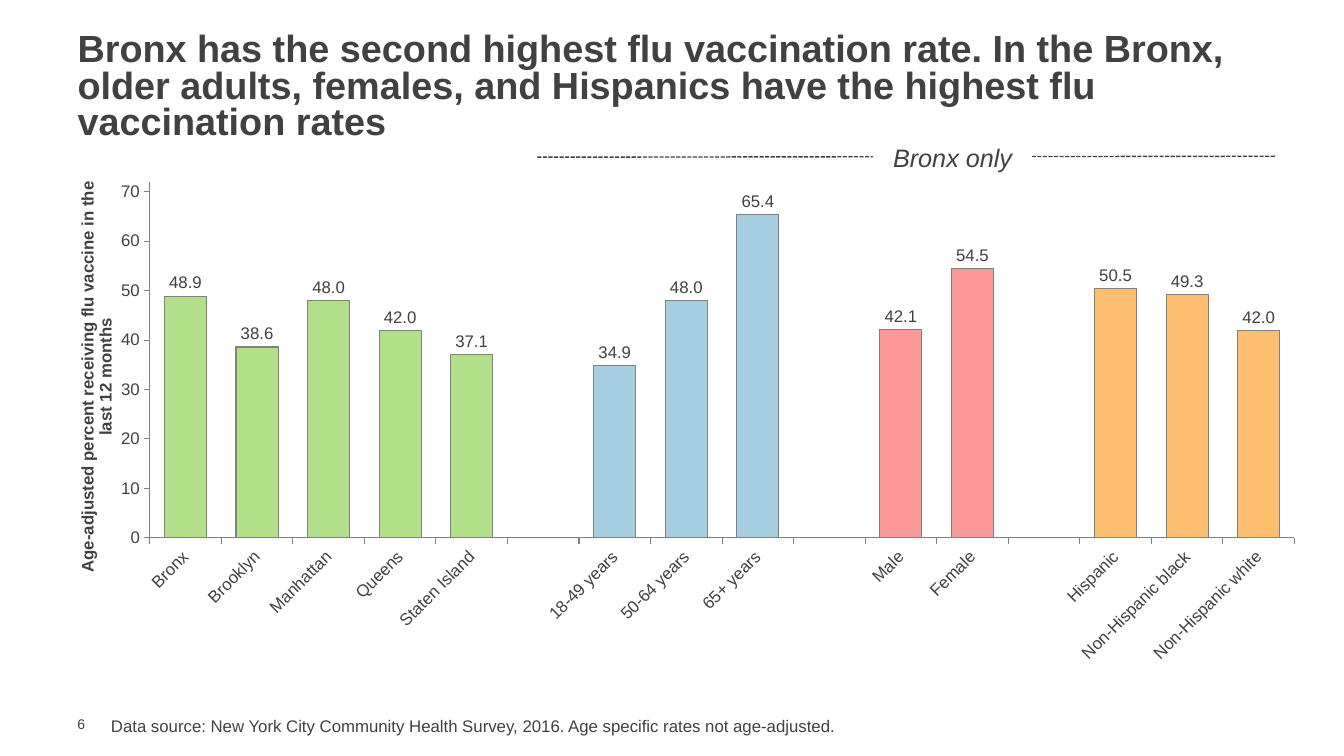
from lxml.etree import SubElement
from pptx import Presentation
from pptx.chart.data import CategoryChartData
from pptx.dml.color import RGBColor
from pptx.enum.chart import XL_CHART_TYPE, XL_LABEL_POSITION, XL_TICK_MARK
from pptx.enum.dml import MSO_LINE
from pptx.enum.shapes import MSO_CONNECTOR, MSO_SHAPE
from pptx.enum.text import MSO_ANCHOR, PP_ALIGN
from pptx.oxml import parse_xml
from pptx.oxml.ns import nsdecls, qn
from pptx.util import Pt

INK = RGBColor(0x41, 0x40, 0x42)
WHITE = RGBColor(0xFF, 0xFF, 0xFF)
GREY = RGBColor(0x80, 0x80, 0x80)
GREEN = RGBColor(0xB2, 0xDF, 0x8A)
BLUE = RGBColor(0xA6, 0xCE, 0xE3)
PINK = RGBColor(0xFB, 0x9A, 0x99)
ORANGE = RGBColor(0xFD, 0xBF, 0x6F)

HEADLINE = ("Bronx has the second highest flu vaccination rate. In the Bronx, older adults, "
            "females, and Hispanics have the highest flu vaccination rates")
RATE_AXIS = "Age-adjusted percent receiving flu vaccine in the last 12 months"
SOURCE = ("Data source: New York City Community Health Survey, 2016. "
          "Age specific rates not age-adjusted.")
GROUPS = [
    (GREEN, {"Bronx": 48.9, "Brooklyn": 38.6, "Manhattan": 48.0, "Queens": 42.0,
             "Staten Island": 37.1}),
    (BLUE, {"18-49 years": 34.9, "50-64 years": 48.0, "65+ years": 65.4}),
    (PINK, {"Male": 42.1, "Female": 54.5}),
    (ORANGE, {"Hispanic": 50.5, "Non-Hispanic black": 49.3, "Non-Hispanic white": 42.0}),
]


def style_font(font, size, bold=False, italic=False):
    """Give a font the deck's typeface and ink colour."""
    font.name = "Arial"
    font.size = Pt(size)
    font.bold = bold
    font.italic = italic
    font.color.rgb = INK


def write_text(shape, text, size, bold=False, italic=False):
    """Put one formatted paragraph in a shape and return the paragraph."""
    shape.text_frame.word_wrap = True
    shape.text_frame.text = text
    paragraph = shape.text_frame.paragraphs[0]
    style_font(paragraph.runs[0].font, size, bold, italic)
    return paragraph


def add_headline(slide, left, top, width, height):
    """Place the slide title in its box."""
    headline = slide.shapes.title
    headline.left, headline.top = Pt(left), Pt(top)
    headline.width, headline.height = Pt(width), Pt(height)
    headline.text_frame.vertical_anchor = MSO_ANCHOR.MIDDLE
    paragraph = write_text(headline, HEADLINE, 27, bold=True)
    paragraph.alignment = PP_ALIGN.LEFT
    paragraph.line_spacing = 0.8


def layout_xml(target, **fractions):
    """Build a manual chart layout from fractions of the chart."""
    inner = '<c:layoutTarget val="inner"/>' if target == "inner" else ""
    modes = '<c:xMode val="edge"/><c:yMode val="edge"/>'
    sizes = "".join(f'<c:{key} val="{value}"/>' for key, value in fractions.items())
    return parse_xml(f'<c:layout {nsdecls("c")}><c:manualLayout>{inner}{modes}{sizes}'
                     '</c:manualLayout></c:layout>')


def set_layout(parent, layout, position):
    """Replace the layout of a chart part, at the given child position."""
    for old in parent.findall(qn("c:layout")):
        parent.remove(old)
    parent.insert(position, layout)


def style_axes(chart):
    """Format the category and the rate axis."""
    for axis in (chart.category_axis, chart.value_axis):
        axis.has_major_gridlines = False
        axis.major_tick_mark = XL_TICK_MARK.OUTSIDE
        axis.minor_tick_mark = XL_TICK_MARK.NONE
        axis.format.line.color.rgb = GREY
        axis.format.line.width = Pt(0.75)
        style_font(axis.tick_labels.font, 12)
    category_text = chart.category_axis._element.find(qn("c:txPr")).find(qn("a:bodyPr"))
    category_text.set("rot", "-2700000")
    category_text.set("vert", "horz")

    rates = chart.value_axis
    rates.minimum_scale, rates.maximum_scale, rates.major_unit = 0, 72, 10
    rates.tick_labels.number_format = "0"
    rates.tick_labels.number_format_is_linked = False
    rate_title = rates.axis_title
    rate_title.text_frame.text = RATE_AXIS
    style_font(rate_title.text_frame.paragraphs[0].runs[0].font, 12, bold=True)
    title_body = rate_title._element.find(".//" + qn("a:bodyPr"))
    title_body.set("rot", "-5400000")
    title_body.set("vert", "horz")
    set_layout(rate_title._element, layout_xml("outer", x=0.006, y=0.02), 1)


def add_rate_chart(slide, left, top, width, height):
    """Place the column chart of vaccination rates, one colour per group."""
    data = CategoryChartData(number_format="#,##0.0")
    bar_colors, labels, values = [], [], []
    for color, rates in GROUPS:
        if labels:
            labels.append("")
            values.append(None)
            bar_colors.append(color)
        labels.extend(rates)
        values.extend(rates.values())
        bar_colors.extend([color] * len(rates))
    data.categories = labels
    data.add_series("Series 1", values)
    chart = slide.shapes.add_chart(XL_CHART_TYPE.COLUMN_CLUSTERED, Pt(left), Pt(top),
                                   Pt(width), Pt(height), data).chart
    chart.has_legend = False
    chart.has_title = False
    style_font(chart.font, 12)
    style_axes(chart)
    set_layout(chart._chartSpace.chart.plotArea,
               layout_xml("inner", x=0.067, y=0.027, w=0.921, h=0.702), 0)

    plot = chart.plots[0]
    plot.gap_width = 70
    plot.vary_by_categories = False
    plot.has_data_labels = True
    rate_labels = plot.data_labels
    rate_labels.show_value = True
    rate_labels.number_format = "#,##0.0"
    rate_labels.number_format_is_linked = False
    rate_labels.position = XL_LABEL_POSITION.OUTSIDE_END
    style_font(rate_labels.font, 12)
    bars = plot.series[0]
    bars.format.fill.solid()
    bars.format.fill.fore_color.rgb = GREEN
    bars.format.line.color.rgb = GREY
    bars.format.line.width = Pt(0.75)
    for index, color in enumerate(bar_colors):
        if color != GREEN:
            bar = bars.points[index].format
            bar.fill.solid()
            bar.fill.fore_color.rgb = color
            bar.line.color.rgb = GREY
            bar.line.width = Pt(0.75)


def add_bronx_bracket(slide, left, top, width, height):
    """Place the dashed rule with its label over the Bronx-only groups."""
    rule = slide.shapes.add_connector(MSO_CONNECTOR.STRAIGHT, Pt(left), Pt(top + 14.4),
                                      Pt(left + width), Pt(top + 13.7))
    rule.line.color.rgb = INK
    rule.line.width = Pt(1)
    rule.line.dash_style = MSO_LINE.SQUARE_DOT
    SubElement(rule._element.spPr, qn("a:effectLst"))
    label = slide.shapes.add_shape(MSO_SHAPE.RECTANGLE, Pt(left + 239.7), Pt(top),
                                   Pt(113.8), Pt(height))
    label.shadow.inherit = False
    label.fill.solid()
    label.fill.fore_color.rgb = WHITE
    label.line.fill.background()
    label.text_frame.vertical_anchor = MSO_ANCHOR.TOP
    write_text(label, "Bronx only", 18, italic=True).alignment = PP_ALIGN.CENTER


def add_footer(slide, left, top, width, height):
    """Place the page number and the data source."""
    page = slide.shapes.add_textbox(Pt(left), Pt(top + 3.6), Pt(31), Pt(12.2))
    frame = page.text_frame
    frame.margin_top = frame.margin_right = frame.margin_bottom = 0
    frame.vertical_anchor = MSO_ANCHOR.MIDDLE
    write_text(page, "6", 10)
    source = slide.shapes.add_textbox(Pt(left + 24), Pt(top), Pt(width - 24), Pt(height))
    write_text(source, SOURCE, 12)


def main():
    """Build and save the slide."""
    deck = Presentation()
    deck.slide_width, deck.slide_height = Pt(960), Pt(540)
    slide = deck.slides.add_slide(deck.slide_layouts[5])
    add_headline(slide, 48.2, 20.2, 864, 85.7)
    add_rate_chart(slide, 47.5, 120.2, 887.8, 362.2)
    add_footer(slide, 48.2, 507.6, 738, 21.6)
    add_bronx_bracket(slide, 383.8, 97.9, 527.7, 28.8)
    deck.save("out.pptx")


if __name__ == "__main__":
    main()
